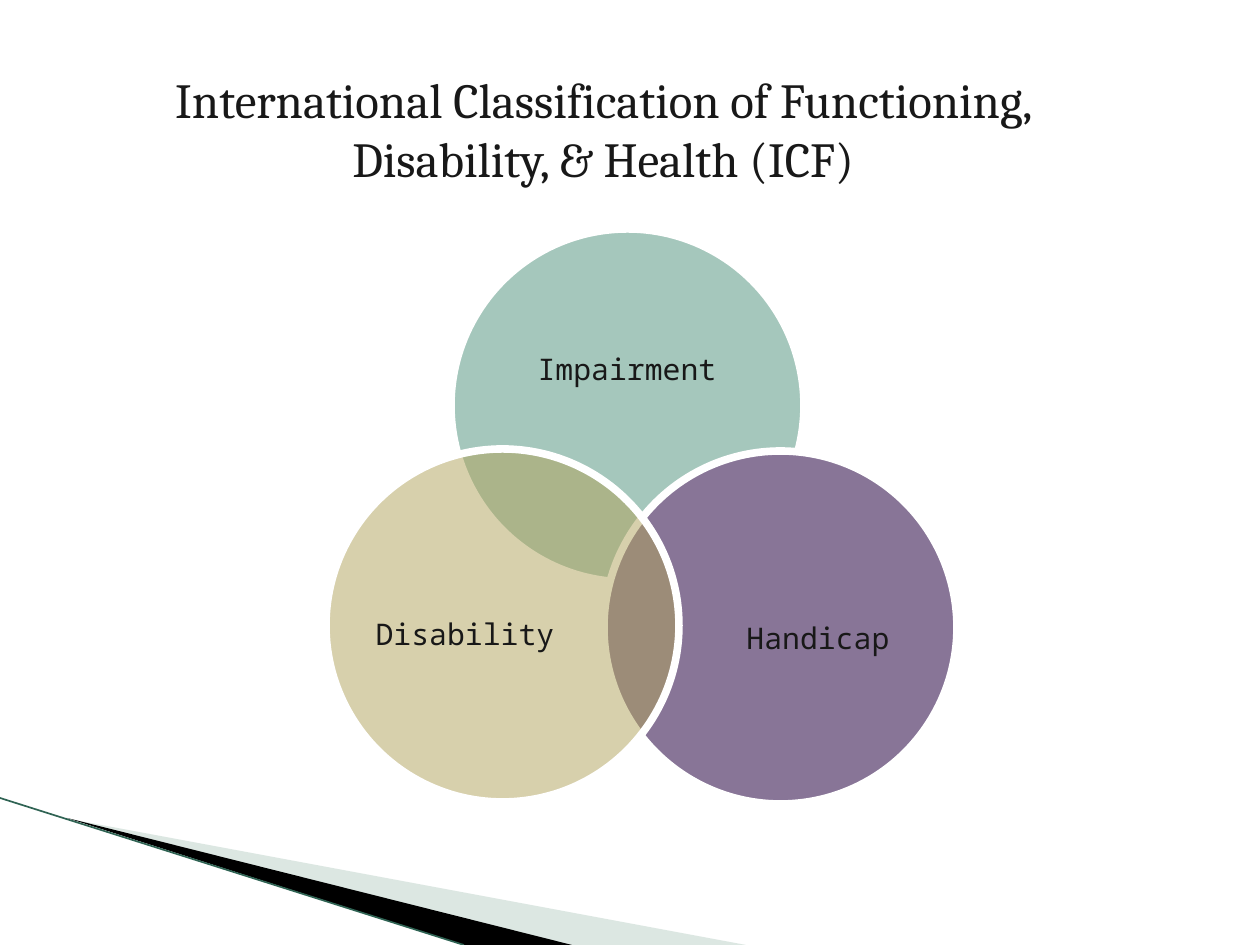
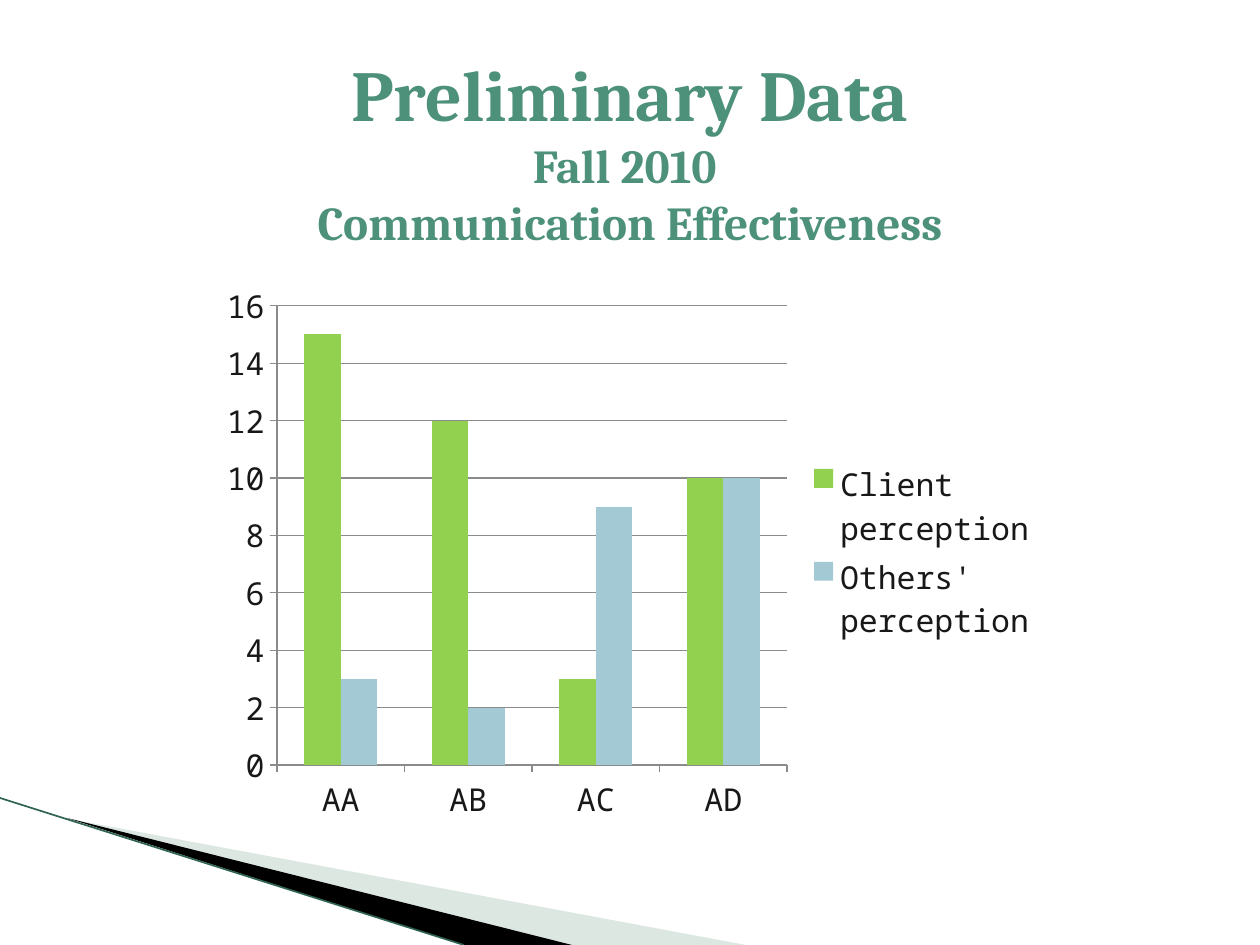
from copy import deepcopy
from dataclasses import dataclass

from lxml import etree
from pptx import Presentation
from pptx.chart.data import CategoryChartData
from pptx.dml.color import RGBColor
from pptx.enum.chart import XL_CHART_TYPE, XL_LEGEND_POSITION, XL_TICK_MARK
from pptx.enum.shapes import MSO_CONNECTOR, MSO_SHAPE
from pptx.enum.text import MSO_ANCHOR, MSO_AUTO_SIZE, PP_ALIGN
from pptx.oxml.ns import qn
from pptx.util import Emu, Pt

COLUMNS = XL_CHART_TYPE.COLUMN_CLUSTERED
LEGEND_RIGHT = XL_LEGEND_POSITION.RIGHT
TICK_OUT = XL_TICK_MARK.OUTSIDE
STRAIGHT = MSO_CONNECTOR.STRAIGHT
OVAL = MSO_SHAPE.OVAL
TOP, MIDDLE = MSO_ANCHOR.TOP, MSO_ANCHOR.MIDDLE
NO_AUTOFIT = MSO_AUTO_SIZE.NONE
CENTER = PP_ALIGN.CENTER

EMU_PER_PX = 914400 / 126
SLIDE_W, SLIDE_H = 1260, 945
TITLE_ONLY = 5


def px(length):
    return Emu(round(length * EMU_PER_PX))


@dataclass(frozen=True)
class Theme:
    heading_font: str = "Cambria"
    body_font: str = "Noto Sans Mono"
    ink: str = "181818"
    green: str = "4D917B"
    sand: str = "B1A35A"
    purple: str = "887597"
    white: str = "FFFFFF"
    black: str = "000000"
    pale_wedge: str = "A8C3B8"
    edge: str = "2F6353"
    axis: str = "8B8B8B"
    client: str = "92D050"
    others: str = "A3CAD4"
    topic_size: int = 28
    headline_size: int = 41
    subtitle_size: int = 27
    label_size: int = 17
    chart_size: int = 18


class Deck:
    """Holds the theme and the slide that is being drawn."""

    def __init__(self, theme):
        self.theme = theme
        self.presentation = Presentation()
        self.presentation.slide_width = px(SLIDE_W)
        self.presentation.slide_height = px(SLIDE_H)
        self.slide = None

    def new_slide(self):
        layout = self.presentation.slide_layouts[TITLE_ONLY]
        self.slide = self.presentation.slides.add_slide(layout)
        self.corner()

    def corner(self):
        """Draw the swoosh in the lower left corner."""
        theme = self.theme
        self.wedge([(69, 819), (746, SLIDE_H), (570, SLIDE_H)], theme.pale_wedge, 40)
        self.wedge([(67, 818), (572, SLIDE_H), (464, SLIDE_H)], theme.black)
        self.line((0, 798), (464, SLIDE_H), theme.edge, 0.95)

    def fill(self, shape, color, opacity=100):
        shape.fill.solid()
        shape.fill.fore_color.rgb = RGBColor.from_string(color)
        if opacity < 100:
            srgb = shape.fill._xPr.find(".//" + qn("a:srgbClr"))
            etree.SubElement(srgb, qn("a:alpha"), val=str(opacity * 1000))

    def wedge(self, corners, color, opacity=100):
        builder = self.slide.shapes.build_freeform(*corners[0], scale=EMU_PER_PX)
        builder.add_line_segments(corners[1:], close=True)
        wedge = builder.convert_to_shape()
        wedge.shadow.inherit = False
        self.fill(wedge, color, opacity)
        wedge.line.fill.background()

    def line(self, start, end, color, width):
        line = self.slide.shapes.add_connector(
            STRAIGHT, *(px(value) for value in start + end))
        line.line.color.rgb = RGBColor.from_string(color)
        line.line.width = Pt(width)
        etree.SubElement(line._element.spPr, qn("a:effectLst"))

    def run(self, paragraph, text, font, size, color, bold=False):
        run = paragraph.add_run()
        run.text = text
        run.font.name = font
        run.font.size = Pt(size)
        run.font.bold = bold
        run.font.color.rgb = RGBColor.from_string(color)
        return run

    def title(self, box, lines, color, bold=False, anchor=MIDDLE):
        """Fill the title with (text, size) lines; each break keeps its line's size."""
        title = self.slide.shapes.title
        title.left, title.top, title.width, title.height = map(px, box)
        frame = title.text_frame
        frame.auto_size = NO_AUTOFIT
        frame.vertical_anchor = anchor
        paragraph = frame.paragraphs[0]
        paragraph.alignment = CENTER
        previous = None
        for text, size in lines:
            if previous is not None:
                line_break = paragraph._p.add_br()
                line_break.append(deepcopy(previous.font._rPr))
            previous = self.run(paragraph, text, self.theme.heading_font,
                                size, color, bold)

    def circle(self, left, top, diameter, color, opacity=100):
        circle = self.slide.shapes.add_shape(
            OVAL, px(left), px(top), px(diameter), px(diameter))
        circle.shadow.inherit = False
        self.fill(circle, color, opacity)
        circle.line.color.rgb = RGBColor.from_string(self.theme.white)
        circle.line.width = Pt(4.33)

    def label(self, box, text):
        frame = self.slide.shapes.add_textbox(*map(px, box)).text_frame
        frame.word_wrap = True
        frame.vertical_anchor = MIDDLE
        frame.margin_left = frame.margin_right = 0
        frame.margin_top = frame.margin_bottom = 0
        paragraph = frame.paragraphs[0]
        paragraph.alignment = CENTER
        paragraph.line_spacing = 0.9
        self.run(paragraph, text, self.theme.body_font,
                 self.theme.label_size, self.theme.ink)

    def column_chart(self, box, categories, series):
        """Draw clustered columns; series holds (name, values, color)."""
        data = CategoryChartData()
        data.categories = categories
        for name, values, _ in series:
            data.add_series(name, values)
        chart = self.slide.shapes.add_chart(COLUMNS, *map(px, box), data).chart
        chart.has_title = False
        chart.font.name = self.theme.body_font
        chart.font.size = Pt(self.theme.chart_size)
        chart.font.color.rgb = RGBColor.from_string(self.theme.ink)
        chart.has_legend = True
        chart.legend.position = LEGEND_RIGHT
        chart.legend.include_in_layout = False

        plot = chart.plots[0]
        plot.gap_width = 150
        plot.overlap = 0
        plot.vary_by_categories = False
        for columns, (_, _, color) in zip(plot.series, series):
            self.fill(columns.format, color)
            columns.format.line.fill.background()

        value_axis = chart.value_axis
        value_axis.minimum_scale = 0
        value_axis.maximum_scale = 16
        value_axis.major_unit = 2
        value_axis.has_major_gridlines = True
        for axis in (chart.category_axis, value_axis):
            axis.major_tick_mark = TICK_OUT
        for ruled in (chart.category_axis, value_axis, value_axis.major_gridlines):
            ruled.format.line.color.rgb = RGBColor.from_string(self.theme.axis)
            ruled.format.line.width = Pt(0.75)


def classification_slide(deck):
    theme = deck.theme
    deck.new_slide()
    topic = "International Classification of Functioning, Disability, & Health (ICF)"
    deck.title((94, 63, 1018, 131), [(topic, theme.topic_size)], theme.ink, anchor=TOP)
    diameter = 353
    concepts = [
        ("Impairment", (451, 229), theme.green, 50, (498, 291, 258, 159)),
        ("Handicap", (604, 451), theme.purple, 100, (712, 543, 212, 194)),
        ("Disability", (326, 449), theme.sand, 50, (359, 539, 212, 194)),
    ]
    for concept, corner, color, opacity, label_box in concepts:
        deck.circle(*corner, diameter, color, opacity)
        deck.label(label_box, concept)


def data_slide(deck):
    theme = deck.theme
    deck.new_slide()
    deck.title((63, 38, 1134, 224), [
        ("Preliminary Data", theme.headline_size),
        ("Fall 2010 ", theme.subtitle_size),
        ("Communication Effectiveness", theme.subtitle_size),
    ], theme.green, bold=True)
    deck.column_chart((210, 273, 840, 559), ["AA", "AB", "AC", "AD"], [
        ("Client perception", (15, 12, 3, 10), theme.client),
        ("Others' perception", (3, 2, 9, 10), theme.others),
    ])


def main():
    deck = Deck(Theme())
    classification_slide(deck)
    data_slide(deck)
    deck.presentation.save("out.pptx")


if __name__ == "__main__":
    main()
